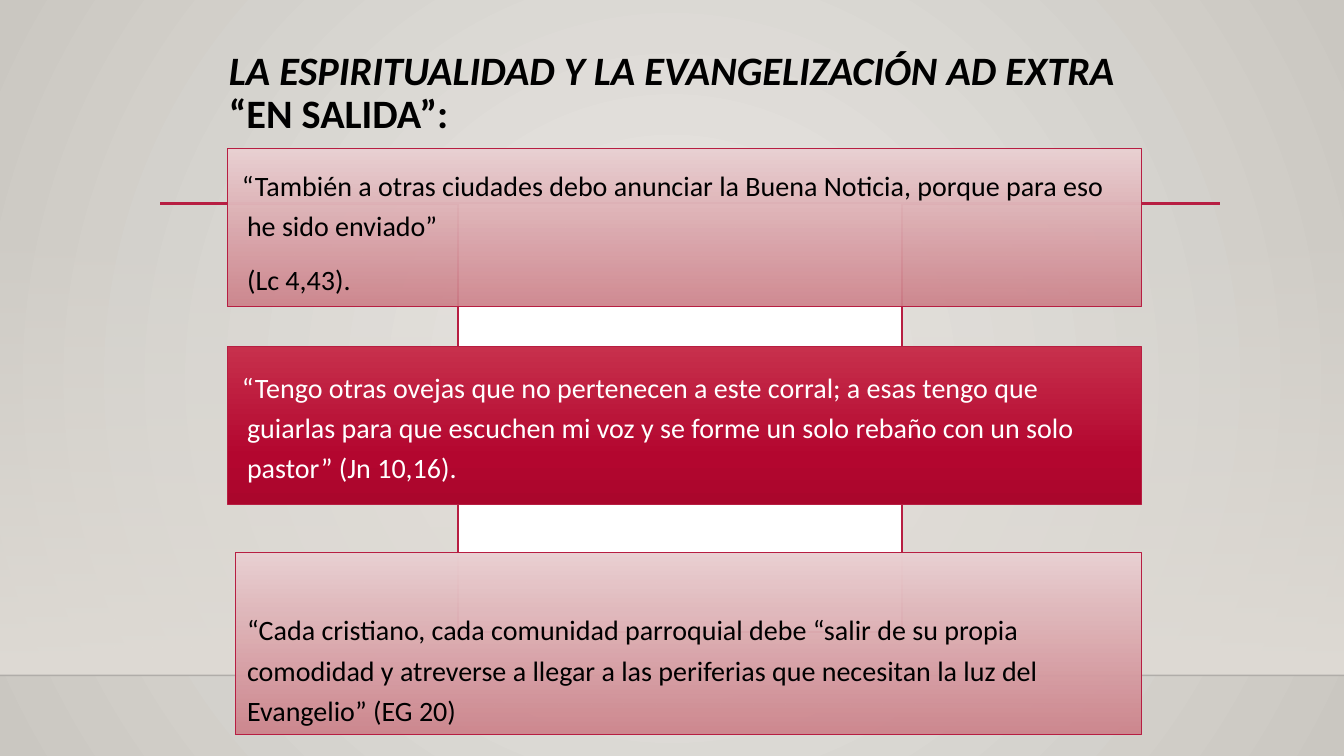
from dataclasses import dataclass

from pptx import Presentation
from pptx import util as u
from pptx.dml.color import RGBColor
from pptx.enum import shapes, text
from pptx.oxml.ns import qn
from pptx.oxml.xmlchemy import OxmlElement


@dataclass(frozen=True)
class Theme:
    font: str = "Calibri"
    head: float = 28.8
    body: float = 20
    black: str = "000000"
    white: str = "FFFFFF"
    red: str = "B71E42"
    floor: str = "000001"
    # Gradient stops: position, colour, opacity (all in percent)
    back: tuple = ((0, "ECEAE7", 100), (100, "CAC7C1", 100))
    wall: tuple = ((0, "DFDBD5", 0), (100, "DFDBD5", 100))
    pink: tuple = ((0, "EAD1D3", 100), (100, "CD828A", 92))
    deep: tuple = ((0, "C7304C", 100), (69, "B3062F", 100),
                   (100, "AA062C", 100))


T = Theme()


def node(parent, tag, **attrs):
    """Append a child element with the given attributes."""
    child = OxmlElement(tag)
    for key, val in attrs.items():
        child.set(key, str(val))
    parent.append(child)
    return child


def blend(grad, stops, radial=False):
    """Fill a gradient element, downward or from the centre."""
    for child in list(grad):
        grad.remove(child)
    rows = node(grad, "a:gsLst")
    for pos, color, alpha in stops:
        stop = node(rows, "a:gs", pos=pos * 1000)
        tint = node(stop, "a:srgbClr", val=color)
        if alpha < 100:
            node(tint, "a:alpha", val=alpha * 1000)
    if radial:
        ring = node(grad, "a:path", path="circle")
        node(ring, "a:fillToRect", l=50000, t=50000, r=50000, b=50000)
    else:
        node(grad, "a:lin", ang=90 * 60000, scaled=0)


def panel(slide, box, fill, width=None):
    """Rectangle with a plain colour or gradient stops."""
    shape = slide.shapes.add_shape(
        shapes.MSO_SHAPE.RECTANGLE, *map(u.Inches, box))
    shape.shadow.inherit = False
    if isinstance(fill, str):
        shape.fill.solid()
        shape.fill.fore_color.rgb = RGBColor.from_string(fill)
    else:
        shape.fill.gradient()
        blend(shape._element.spPr.find(qn("a:gradFill")), fill)
    if width:
        shape.line.color.rgb = RGBColor.from_string(T.red)
        shape.line.width = u.Pt(width)
    else:
        shape.line.fill.background()


def rule(slide, left, right, top, color, width, alpha=100):
    """Horizontal line."""
    line = slide.shapes.add_connector(
        shapes.MSO_CONNECTOR.STRAIGHT, u.Inches(left), u.Inches(top),
        u.Inches(right), u.Inches(top))
    line.line.color.rgb = RGBColor.from_string(color)
    line.line.width = u.Pt(width)
    if alpha < 100:
        tint = line._element.spPr.find(".//" + qn("a:srgbClr"))
        node(tint, "a:alpha", val=alpha * 1000)
    node(line._element.spPr, "a:effectLst")


def place(slide, holder, box):
    """Move a placeholder to its box, in front of the panels."""
    holder.left, holder.top, holder.width, holder.height = map(u.Inches, box)
    slide.shapes._spTree.append(holder._element)
    frame = holder.text_frame
    frame.word_wrap = True
    frame.auto_size = text.MSO_AUTO_SIZE.NONE
    frame.vertical_anchor = text.MSO_ANCHOR.TOP
    return frame


def write(para, words, size, color, bold=False, italic=False):
    """Add one formatted run."""
    run = para.add_run()
    run.text = words
    font = run.font
    font.name, font.size = T.font, u.Pt(size)
    font.bold, font.italic = bold, italic
    font.color.rgb = RGBColor.from_string(color)


def title(slide):
    frame = place(slide, slide.shapes.title, (2.17, 0.45, 9, 1.25))
    para = frame.paragraphs[0]
    para.alignment = text.PP_ALIGN.LEFT
    para.line_spacing = 0.9
    write(para, "LA ESPIRITUALIDAD Y LA EVANGELIZACIÓN AD EXTRA",
          T.head, T.black, True, True)
    write(para, " “EN SALIDA”:", T.head, T.black, True)


def quotes(slide):
    # Space before (points), first-line indent (inches), colour, words
    rows = (
        (0, -0.05, T.black, "“También a otras ciudades debo anunciar la Buena "
         "Noticia, porque para eso he sido enviado”"),
        (10, 0, T.black, "(Lc 4,43)."),
        (48, -0.05, T.white, "“Tengo otras ovejas que no pertenecen a este "
         "corral; a esas tengo que guiarlas para que escuchen mi voz y se "
         "forme un solo rebaño con un solo pastor” (Jn 10,16)."),
        (87, 0, T.black, "“Cada cristiano, cada comunidad parroquial debe "
         "“salir de su propia comodidad y atreverse a llegar a las periferias "
         "que necesitan la luz del Evangelio” (EG 20)"),
    )
    frame = place(slide, slide.placeholders[1], (2.1, 1.55, 9.21, 5.75))
    for i, (gap, indent, color, words) in enumerate(rows):
        para = frame.add_paragraph() if i else frame.paragraphs[0]
        props = para._p.get_or_add_pPr()
        props.set("marL", str(u.Inches(0.25)))
        props.set("indent", str(u.Inches(indent)))
        node(props, "a:buNone")
        para.alignment = text.PP_ALIGN.LEFT
        para.line_spacing = 1.2
        para.space_before = u.Pt(gap)
        write(para, words, T.body, color)


def main():
    deck = Presentation()
    deck.slide_width, deck.slide_height = u.Inches(13.33), u.Inches(7.5)
    slide = deck.slides.add_slide(deck.slide_layouts[1])

    # Backdrop
    slide.background.fill.gradient()
    blend(slide._element.find(".//" + qn("a:gradFill")), T.back, radial=True)
    panel(slide, (0, 2.21, 13.33, 4.49), T.wall)
    rule(slide, 0, 13.33, 6.7, T.floor, 1, 20)
    rule(slide, 1.59, 12.1, 2.02, T.red, 2.5)

    # Column and the three quote panels
    panel(slide, (4.54, 2.02, 4.41, 4.25), T.white, 1.25)
    panel(slide, (2.34, 5.48, 8.98, 1.81), T.pink, 0.75)
    panel(slide, (2.26, 3.44, 9.06, 1.57), T.deep, 0.75)
    panel(slide, (2.26, 1.47, 9.06, 1.57), T.pink, 0.75)

    # Text
    title(slide)
    quotes(slide)
    deck.save("out.pptx")


if __name__ == "__main__":
    main()
